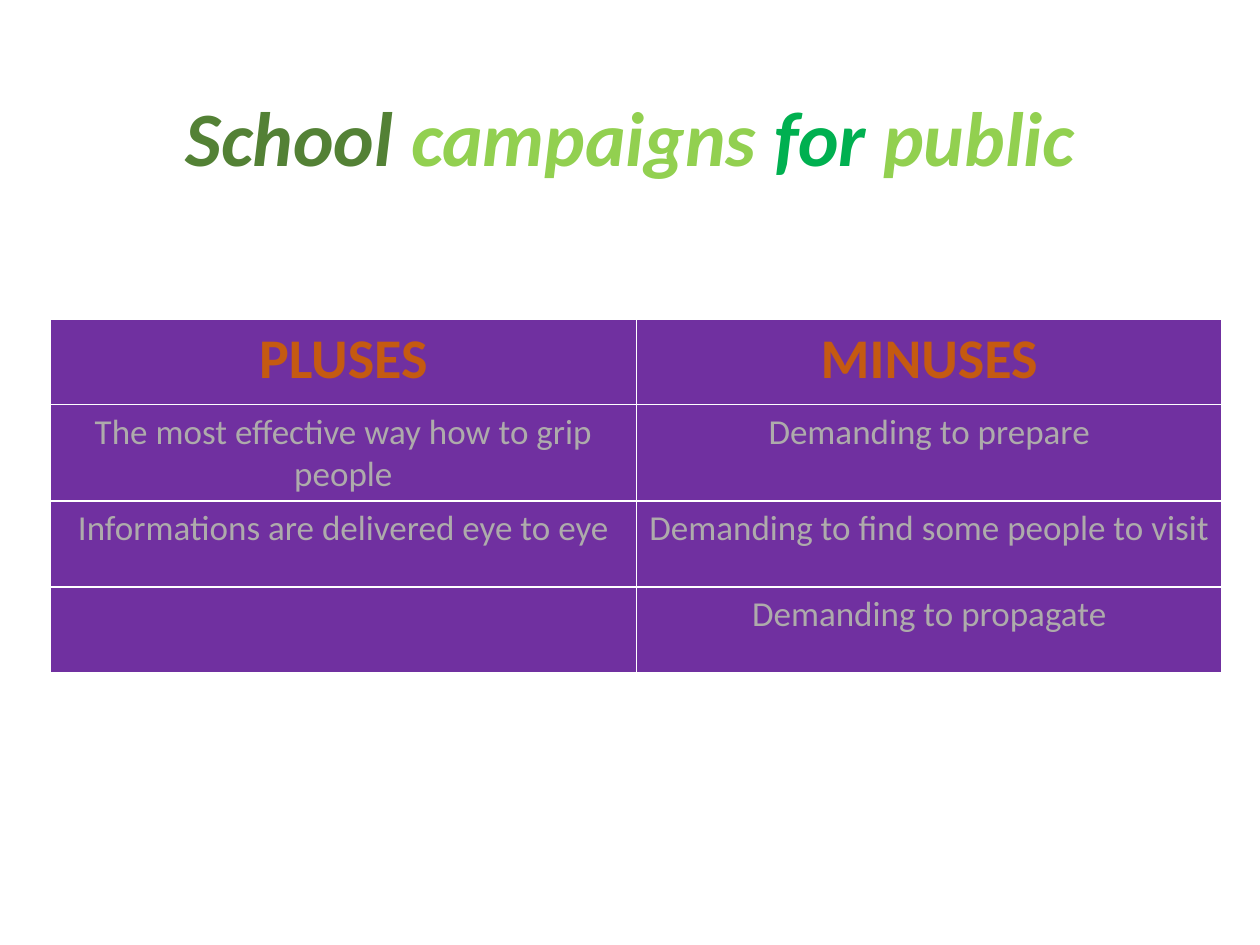
from typing import NamedTuple

from lxml import etree
from pptx import Presentation
from pptx.dml.color import RGBColor
from pptx.enum import text
from pptx.oxml import ns
from pptx.util import Inches, Pt

FONT = "Calibri"
DARK_GREEN = RGBColor(0x53, 0x81, 0x35)
LIME = RGBColor(0x92, 0xD0, 0x50)
GREEN = RGBColor(0x00, 0xB0, 0x50)
PURPLE = RGBColor(0x70, 0x30, 0xA0)
ORANGE = RGBColor(0xC5, 0x5A, 0x11)
GREY = RGBColor(0xAE, 0xAB, 0xAB)
WHITE = RGBColor(0xFF, 0xFF, 0xFF)


class Word(NamedTuple):
    text: str
    color: RGBColor


class CellStyle(NamedTuple):
    size: int
    color: RGBColor
    bold: bool


TITLE = [
    Word("School ", DARK_GREEN),
    Word("campaigns ", LIME),
    Word("for ", GREEN),
    Word("public", LIME),
]
HEADER = CellStyle(32, ORANGE, True)
BODY = CellStyle(20, GREY, False)
ROWS = [
    ("PLUSES", "MINUSES"),
    ("The most effective way how to grip people", "Demanding to prepare"),
    ("Informations are delivered eye to eye", "Demanding to find some people to visit"),
    ("", "Demanding to propagate"),
]
COL_WIDTH = Inches(4.65)
ROW_HEIGHT = Inches(0.68)


def add_title(slide, words: list[Word]) -> None:
    box = slide.shapes.add_textbox(Inches(0.69), Inches(0.4), Inches(8.62), Inches(1.45))
    tf = box.text_frame
    tf.word_wrap = True
    tf.vertical_anchor = text.MSO_ANCHOR.MIDDLE
    p = tf.paragraphs[0]
    p.alignment = text.PP_ALIGN.CENTER
    p.line_spacing = 0.9
    p.font.name, p.font.size = FONT, Pt(44)
    p.font.bold = p.font.italic = True
    for word in words:
        r = p.add_run()
        r.text = word.text
        r.font.color.rgb = word.color


def set_borders(cell, color: RGBColor, width: int) -> None:
    tc_pr = cell._tc.get_or_add_tcPr()
    for i, side in enumerate(("lnL", "lnR", "lnT", "lnB")):
        ln = etree.Element(ns.qn(f"a:{side}"), w=str(width))
        fill = etree.SubElement(ln, ns.qn("a:solidFill"))
        etree.SubElement(fill, ns.qn("a:srgbClr"), val=str(color))
        tc_pr.insert(i, ln)


def fill_cell(cell, content: str, style: CellStyle) -> None:
    cell.fill.solid()
    cell.fill.fore_color.rgb = PURPLE
    set_borders(cell, WHITE, Pt(1))
    cell.text = content
    p = cell.text_frame.paragraphs[0]
    p.alignment = text.PP_ALIGN.CENTER
    p.font.name, p.font.size = FONT, Pt(style.size)
    p.font.bold = style.bold
    p.font.color.rgb = style.color


def add_comparison(slide, rows: list[tuple[str, str]]) -> None:
    cols = len(rows[0])
    table = slide.shapes.add_table(
        len(rows), cols, Inches(0.4), Inches(2.53),
        COL_WIDTH * cols, ROW_HEIGHT * len(rows),
    ).table
    for i, row in enumerate(rows):
        for j, content in enumerate(row):
            fill_cell(table.cell(i, j), content, BODY if i else HEADER)


def main() -> None:
    prs = Presentation()
    prs.slide_width, prs.slide_height = Inches(10), Inches(7.5)
    slide = prs.slides.add_slide(prs.slide_layouts[6])
    add_title(slide, TITLE)
    add_comparison(slide, ROWS)
    prs.save("out.pptx")


if __name__ == "__main__":
    main()
